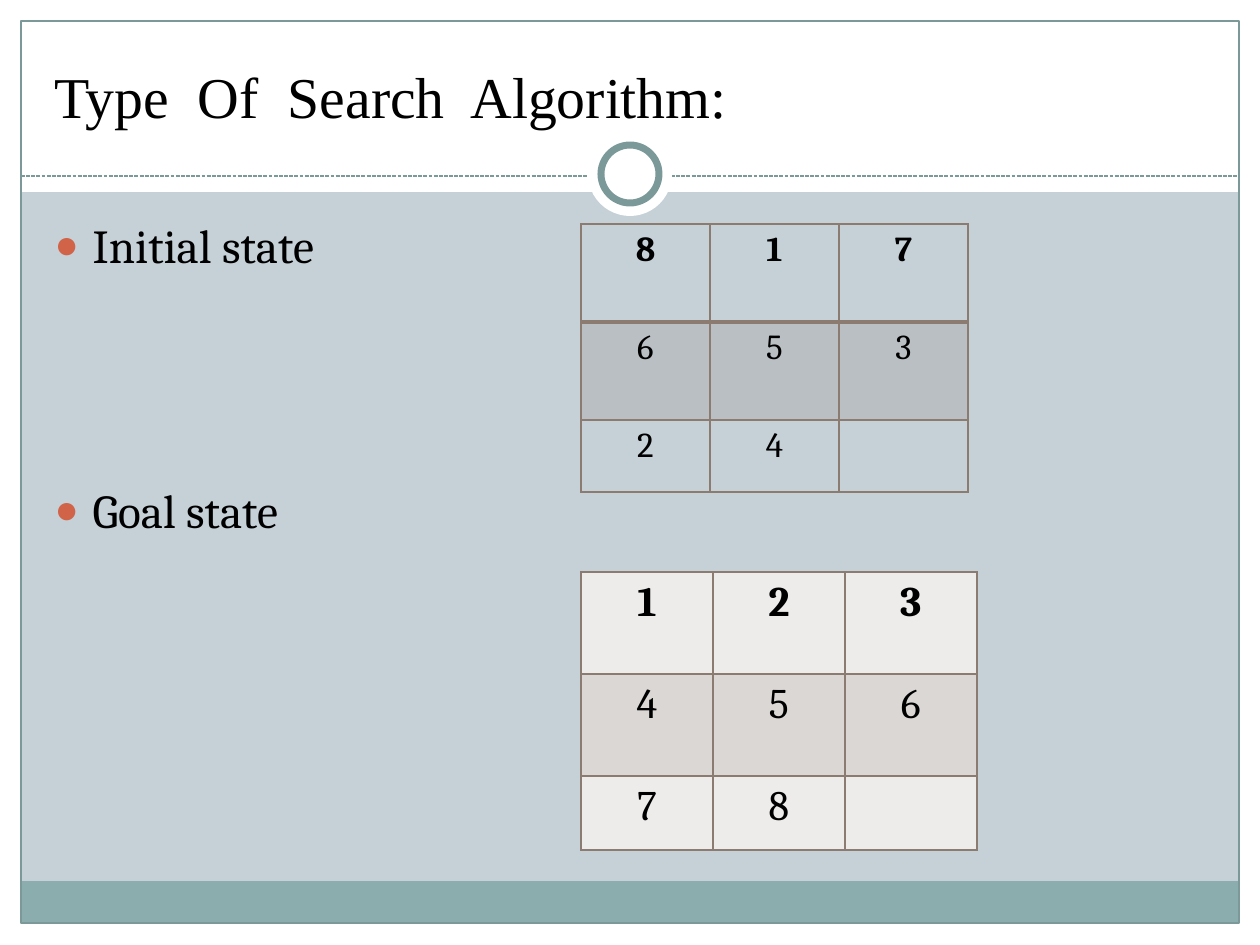
from lxml import etree
from pptx import Presentation
from pptx import util as u
from pptx.dml.color import RGBColor
from pptx.enum import dml, shapes, text
from pptx.oxml import ns

PX = 914400 / 126
BLACK, WHITE, TEAL, BROWN = "000000", "FFFFFF", "7C999A", "8C7B70"
INITIAL = ["817", "653", "24 "]
GOAL = ["123", "456", "78 "]


def px(n):
    return u.Emu(round(n * PX))


def rgb(code):
    return RGBColor.from_string(code)


def add_xml(parent, tag, **attrs):
    return etree.SubElement(parent, ns.qn(tag), attrs)


def add_run(p, words, font, size, bold=False):
    r = p.add_run()
    r.text = words
    r.font.name, r.font.size, r.font.bold = font, u.Pt(size), bold
    r.font.color.rgb = rgb(BLACK)


def add_panel(s, kind, box, fill=None, line=None, width=0.75):
    sp = s.shapes.add_shape(kind, *map(px, box))
    sp.shadow.inherit = False
    if fill:
        sp.fill.solid()
        sp.fill.fore_color.rgb = rgb(fill)
    else:
        sp.fill.background()
    if line:
        sp.line.color.rgb = rgb(line)
        sp.line.width = u.Pt(width)
    else:
        sp.line.fill.background()


def add_divider(s, left, right, y):
    line = s.shapes.add_connector(
        shapes.MSO_CONNECTOR.STRAIGHT, px(left), px(y), px(right), px(y))
    line.line.color.rgb = rgb(TEAL)
    line.line.width = u.Pt(0.75)
    line.line.dash_style = dml.MSO_LINE.SQUARE_DOT
    add_xml(line.element.spPr, "a:effectLst")


def add_frame(s):
    rect, oval = shapes.MSO_SHAPE.RECTANGLE, shapes.MSO_SHAPE.OVAL
    margins = [(0, 924, 1260, 21), (0, 0, 1260, 192),
               (0, 0, 21, 945), (1239, 0, 21, 945)]
    for box in margins:
        add_panel(s, rect, box, WHITE)
    add_panel(s, rect, (21, 881, 1217, 43), "8CADAE")
    add_panel(s, rect, (21, 21, 1218, 902), line=TEAL)
    add_divider(s, 21, 1239, 176)
    add_panel(s, oval, (588, 132, 84, 84), WHITE)
    add_panel(s, oval, (601, 145, 58, 58), WHITE, TEAL, 4)


def place_placeholder(sp, box):
    sp.left, sp.top, sp.width, sp.height = map(px, box)
    sp.element.getparent().append(sp.element)
    tf = sp.text_frame
    tf.word_wrap = True
    tf.auto_size = text.MSO_AUTO_SIZE.NONE
    return tf


def fill_title(sp):
    tf = place_placeholder(sp, (42, 32, 1176, 104))
    tf.vertical_anchor = text.MSO_ANCHOR.BOTTOM
    p = tf.paragraphs[0]
    p.alignment = text.PP_ALIGN.LEFT
    add_run(p, "Type  Of  Search  Algorithm:", "Times New Roman", 33)


def fill_list(sp, items):
    tf = place_placeholder(sp, (42, 210, 1172, 630))
    for i, (words, gap) in enumerate(items):
        p = tf.add_paragraph() if i else tf.paragraphs[0]
        p.space_before = u.Pt(gap)
        add_run(p, words, "Cambria", 27)
        pPr = p._p.get_or_add_pPr()
        pPr.set("marL", str(px(38)))
        pPr.set("indent", str(px(-38)))
        add_xml(add_xml(pPr, "a:buClr"), "a:srgbClr", val="D16349")
        add_xml(pPr, "a:buSzPct", val="85000")
        add_xml(pPr, "a:buFont", typeface="Arial")
        add_xml(pPr, "a:buChar", char="●")


def set_borders(cell, bottom):
    tcPr = cell._tc.get_or_add_tcPr()
    for i, side in enumerate("LRTB"):
        width = bottom if side == "B" else 1
        ln = add_xml(tcPr, "a:ln" + side, w=str(u.Pt(width)))
        add_xml(add_xml(ln, "a:solidFill"), "a:srgbClr", val=BROWN)
        tcPr.insert(i, ln)


def set_fill(cell, color, alpha=None):
    if color is None:
        cell.fill.background()
        return
    cell.fill.solid()
    cell.fill.fore_color.rgb = rgb(color)
    if alpha:
        clr = cell._tc.tcPr.find(".//" + ns.qn("a:srgbClr"))
        add_xml(clr, "a:alpha", val=str(alpha * 1000))


def add_board(s, tiles, at, col, rows, size, fills, head_line=1):
    frame = s.shapes.add_table(
        3, 3, px(at[0]), px(at[1]), px(3 * col), px(sum(rows)))
    table = frame.table
    table.horz_banding = False
    for column in table.columns:
        column.width = px(col)
    for i, (row, height) in enumerate(zip(table.rows, rows)):
        row.height = px(height)
        for cell, tile in zip(row.cells, tiles[i]):
            set_fill(cell, *fills[i % 2])
            set_borders(cell, head_line if i == 0 else 1)
            p = cell.text_frame.paragraphs[0]
            p.alignment = text.PP_ALIGN.CENTER
            if tile.strip():
                add_run(p, tile, "Cambria", size, bold=i == 0)


def main():
    prs = Presentation()
    prs.slide_width, prs.slide_height = px(1260), px(945)
    s = prs.slides.add_slide(prs.slide_layouts[1])
    s.background.fill.solid()
    s.background.fill.fore_color.rgb = rgb("C5D1D7")
    add_frame(s)
    fill_title(s.shapes.title)
    fill_list(s.placeholders[1], [("Initial state", 5.4), ("Goal state", 119)])
    add_board(s, INITIAL, (581, 224), 129, (98, 98, 72), 20,
              [(None,), (BROWN, 20)], head_line=2)
    add_board(s, GOAL, (581, 572), 132, (102, 102, 74), 24,
              [("EEECEB",), ("DAD7D5",)])
    prs.save("out.pptx")


if __name__ == "__main__":
    main()
